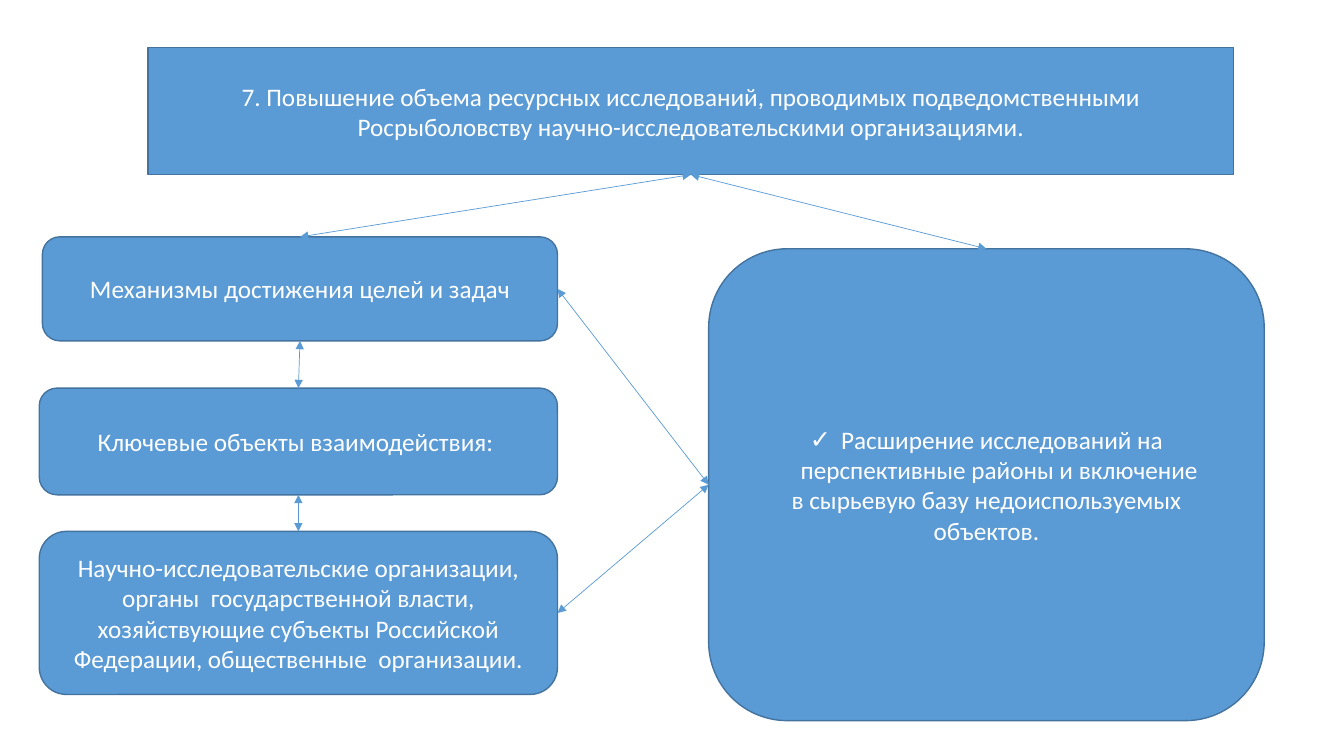
from lxml.etree import SubElement
from pptx import Presentation
from pptx.dml.color import RGBColor
from pptx.enum.shapes import MSO_CONNECTOR, MSO_SHAPE
from pptx.enum.text import MSO_ANCHOR, MSO_AUTO_SIZE, PP_ALIGN
from pptx.oxml.ns import qn
from pptx.util import Cm, Pt

HUES = {"fill": "5B9BD5", "edge": "43739E", "text": "FFFFFF"}
FRAME = {"word_wrap": True, "auto_size": MSO_AUTO_SIZE.NONE,
         "vertical_anchor": MSO_ANCHOR.MIDDLE}
PARA = {"alignment": PP_ALIGN.CENTER, "space_before": Pt(0)}
FONT = {"name": "Calibri", "size": Pt(18), "bold": False}
TOP, LEFT, BOTTOM, RIGHT = range(4)

TITLE = ("7. Повышение объема ресурсных исследований, проводимых подведомственными "
         "Росрыболовству научно-исследовательскими организациями.")
GOALS = ["Расширение исследований на перспективные районы и включение ",
         "в сырьевую базу недоиспользуемых объектов."]
STEPS = [
    ("Механизмы достижения целей и задач", (1.07, 5.97, 12.98, 2.62)),
    ("Ключевые объекты взаимодействия: ", (0.99, 9.78, 13.06, 2.69)),
    ("Научно-исследовательские организации, органы  государственной власти, "
     "хозяйствующие субъекты Российской Федерации, общественные  организации.",
     (0.99, 13.39, 13.06, 4.11)),
]


def color(name):
    return RGBColor.from_string(HUES[name])


def apply(item, values):
    for key, value in values.items():
        setattr(item, key, value)


def style(shape, spot, lines):
    """Place a shape and give it the box look and centred text."""
    apply(shape, dict(zip(("left", "top", "width", "height"), map(Cm, spot))))
    shape.fill.solid()
    shape.fill.fore_color.rgb = color("fill")
    shape.line.color.rgb = color("edge")
    shape.line.width = Pt(1)
    shape.shadow.inherit = False
    frame = shape.text_frame
    frame.text = "\n".join(lines)
    apply(frame, FRAME)
    for para in frame.paragraphs:
        apply(para, PARA)
        for run in para.runs:
            apply(run.font, FONT)
            run.font.color.rgb = color("text")
    return shape


def round_off(holder):
    """Give a placed placeholder a rounded outline."""
    geom = SubElement(holder._element.spPr, qn("a:prstGeom"), prst="roundRect")
    SubElement(geom, qn("a:avLst"))
    holder._element.spPr.xfrm.addnext(geom)


def mark(para, sign=None):
    """Set a hanging bullet sign, or clear the bullet and indent."""
    props = para._p.get_or_add_pPr()
    hang = Cm(0.79) if sign else 0
    props.set("marL", str(hang))
    props.set("indent", str(-hang))
    if sign:
        SubElement(props, qn("a:buChar"), char=sign)
    else:
        SubElement(props, qn("a:buNone"))


def add_box(slide, text, spot):
    shape = slide.shapes.add_shape(MSO_SHAPE.ROUNDED_RECTANGLE, 0, 0, 0, 0)
    return style(shape, spot, [text])


def link(slide, start, side, end, goal):
    """Join the sides of two boxes with a double-headed arrow."""
    arrow = slide.shapes.add_connector(MSO_CONNECTOR.STRAIGHT, 0, 0, 0, 0)
    arrow.begin_connect(start, side)
    arrow.end_connect(end, goal)
    arrow.line.color.rgb = color("fill")
    arrow.line.width = Pt(0.5)
    for tip in ("a:headEnd", "a:tailEnd"):
        SubElement(arrow.line._get_or_add_ln(), qn(tip), type="triangle")
    SubElement(arrow._element.spPr, qn("a:effectLst"))


def main():
    deck = Presentation()
    deck.slide_width, deck.slide_height = Cm(33.87), Cm(19.05)
    slide = deck.slides.add_slide(deck.slide_layouts[1])

    title = style(slide.shapes.title, (3.73, 1.2, 27.36, 3.2), [TITLE])
    goals = style(slide.placeholders[1], (17.86, 6.27, 14, 11.89), GOALS)
    for holder in (title, goals):
        round_off(holder)
    first, second = goals.text_frame.paragraphs
    mark(first, "✓")
    mark(second)

    means, parts, bodies = [add_box(slide, *step) for step in STEPS]
    for ends in [
        (means, TOP, title, BOTTOM),
        (means, BOTTOM, parts, TOP),
        (parts, BOTTOM, bodies, TOP),
        (goals, TOP, title, BOTTOM),
        (goals, LEFT, means, RIGHT),
        (goals, LEFT, bodies, RIGHT),
    ]:
        link(slide, *ends)
    deck.save("out.pptx")


if __name__ == "__main__":
    main()
